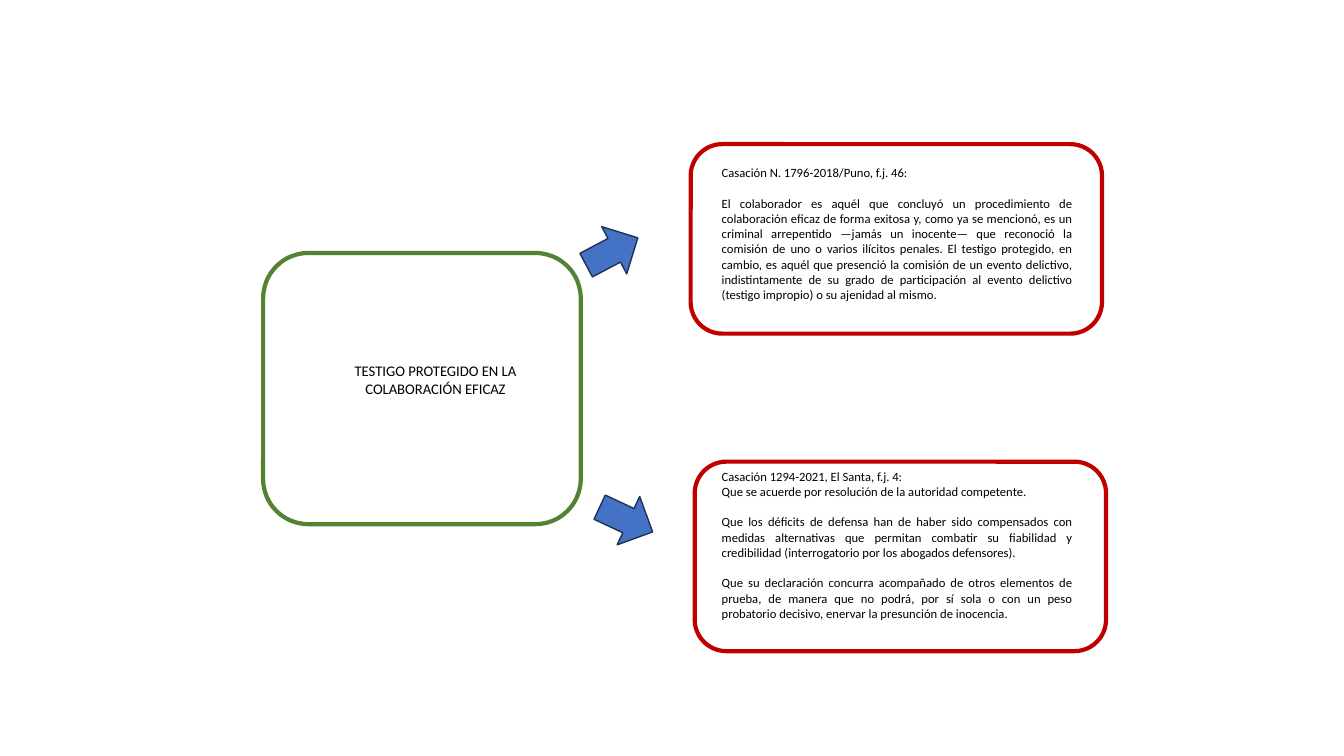
from pptx import Presentation
from pptx.dml.color import RGBColor
from pptx.enum.shapes import MSO_SHAPE as Shape
from pptx.enum.text import MSO_ANCHOR as Anchor, MSO_AUTO_SIZE as AutoSize, PP_ALIGN as Align
from pptx.util import Inches, Pt

GREEN, RED, BLUE, NAVY, BLACK = "548235", "C00000", "4472C4", "1E3256", "000000"
FONT = "Calibri"
BODY_SIZE, TITLE_SIZE = 9, 10.5
PARAGRAPH_GAP = 11

# Each ruling: frame position, text top, paragraphs as (text, space before)
RULINGS = [
    ((6.85, 1.43), 1.59, [
        ("Casación N. 1796-2018/Puno, f.j. 46:", 0),
        ("El colaborador es aquél que concluyó un procedimiento de colaboración eficaz "
         "de forma exitosa y, como ya se mencionó, es un criminal arrepentido —jamás un "
         "inocente— que reconoció la comisión de uno o varios ilícitos penales. El testigo "
         "protegido, en cambio, es aquél que presenció la comisión de un evento delictivo, "
         "indistintamente de su grado de participación al evento delictivo (testigo "
         "impropio) o su ajenidad al mismo.", PARAGRAPH_GAP),
    ]),
    ((6.89, 4.58), 4.6, [
        ("Casación 1294-2021, El Santa, f.j. 4:", 0),
        ("Que se acuerde por resolución de la autoridad competente.", 0),
        ("Que los déficits de defensa han de haber sido compensados con medidas "
         "alternativas que permitan combatir su fiabilidad y credibilidad "
         "(interrogatorio por los abogados defensores).", PARAGRAPH_GAP),
        ("Que su declaración concurra acompañado de otros elementos de prueba, de manera "
         "que no podrá, por sí sola o con un peso probatorio decisivo, enervar la "
         "presunción de inocencia.", PARAGRAPH_GAP),
    ]),
]


def color(hex_code):
    return RGBColor.from_string(hex_code)


class Diagram:
    def __init__(self, slide):
        self.slide = slide

    def outline(self, kind, box, line, weight, fill=None, rotation=0):
        """Draw a preset shape, hollow unless a fill is given."""
        shape = self.slide.shapes.add_shape(kind, *map(Inches, box))
        shape.shadow.inherit = False
        shape.rotation = rotation
        shape.line.color.rgb = color(line)
        shape.line.width = Pt(weight)
        if fill:
            shape.fill.solid()
            shape.fill.fore_color.rgb = color(fill)
        else:
            shape.fill.background()

    def frame(self, box, line):
        self.outline(Shape.ROUNDED_RECTANGLE, box, line, 3)

    def arrow(self, left, top, rotation):
        self.outline(Shape.RIGHT_ARROW, (left, top, 0.58, 0.53), NAVY, 1, BLUE, rotation)

    def fill_text(self, text_frame, paragraphs, size, align):
        text_frame.word_wrap = True
        text_frame.auto_size = AutoSize.NONE
        text_frame.vertical_anchor = Anchor.TOP
        for index, (text, gap) in enumerate(paragraphs):
            paragraph = text_frame.add_paragraph() if index else text_frame.paragraphs[0]
            paragraph.alignment = align
            paragraph.space_before = Pt(gap)
            run = paragraph.add_run()
            run.text = text
            run.font.name = FONT
            run.font.size = Pt(size)
            run.font.color.rgb = color(BLACK)

    def title(self, text, box):
        heading = self.slide.shapes.title
        heading.left, heading.top, heading.width, heading.height = map(Inches, box)
        self.fill_text(heading.text_frame, [(text, 0)], TITLE_SIZE, Align.CENTER)

    def body(self, paragraphs, box):
        ruling_text = self.slide.shapes.add_textbox(*map(Inches, box))
        self.fill_text(ruling_text.text_frame, paragraphs, BODY_SIZE, Align.JUSTIFY)


def main():
    deck = Presentation()
    deck.slide_width, deck.slide_height = Inches(13.33), Inches(7.5)
    diagram = Diagram(deck.slides.add_slide(deck.slide_layouts[5]))

    diagram.frame((2.61, 2.51, 3.15, 2.69), GREEN)
    diagram.title("TESTIGO PROTEGIDO EN LA COLABORACIÓN EFICAZ", (3.02, 3.54, 2.6, 0.45))
    diagram.arrow(5.78, 2.23, 332.1)
    diagram.arrow(5.92, 4.89, 25)
    for frame_corner, text_top, paragraphs in RULINGS:
        diagram.frame((*frame_corner, 4.08, 1.88), RED)
        diagram.body(paragraphs, (7.06, text_top, 3.67, 1.62))

    deck.save("out.pptx")


if __name__ == "__main__":
    main()
